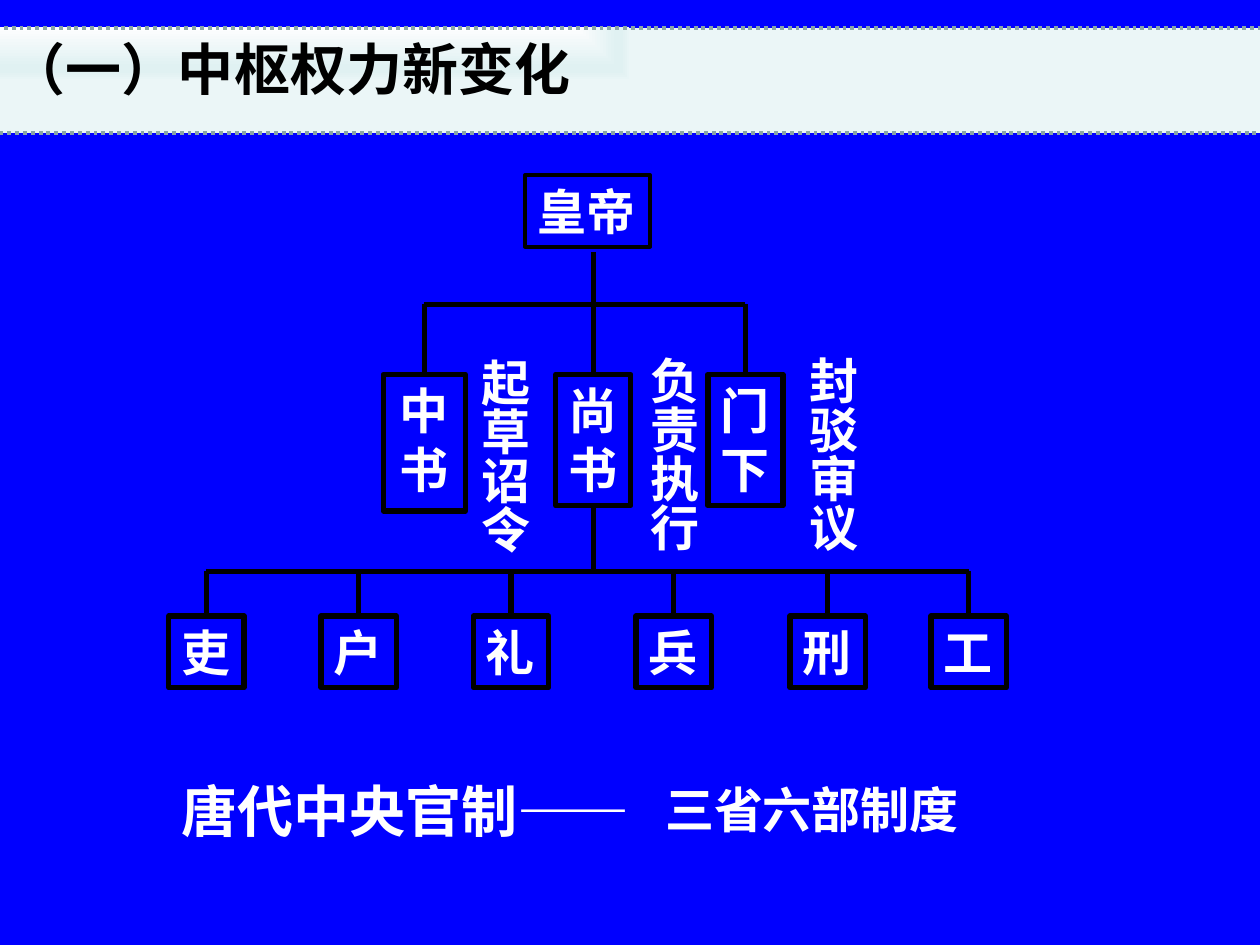
"""Build the slide on the Tang three departments and six ministries."""
from lxml import etree
from pptx import Presentation
from pptx import util as u
from pptx.dml.color import RGBColor
from pptx.enum import dml, shapes, text
from pptx.oxml.ns import qn

BLUE = RGBColor(0x00, 0x00, 0xFF)
BLACK = RGBColor(0x00, 0x00, 0x00)
WHITE = RGBColor(0xFF, 0xFF, 0xFF)
BORDER = RGBColor(0x89, 0xA4, 0xA7)
BANNER_STOPS = (
    (0, RGBColor(0xFC, 0xFD, 0xFE)),
    (74, RGBColor(0xE0, 0xF1, 0xF2)),
    (83, RGBColor(0xE0, 0xF1, 0xF2)),
    (100, RGBColor(0xEB, 0xF6, 0xF7)),
)
TOP, BOTTOM = 0, 2


class ChartSlide:
    font_name = "Noto Sans CJK SC"
    line_width = 3

    def __init__(self, presentation):
        self.slide = presentation.slides.add_slide(presentation.slide_layouts[5])
        self.slide.background.fill.solid()
        self.slide.background.fill.fore_color.rgb = BLUE

    def set_text(self, shape, words, size=28, color=WHITE, wrap=False, align=text.PP_ALIGN.LEFT):
        frame = shape.text_frame
        frame.text = words
        frame.word_wrap = wrap
        frame.auto_size = text.MSO_AUTO_SIZE.SHAPE_TO_FIT_TEXT
        frame.vertical_anchor = text.MSO_ANCHOR.TOP
        for paragraph in frame.paragraphs:
            paragraph.alignment = align
            font = paragraph.font
            font.size, font.bold, font.name = u.Pt(size), True, self.font_name
            font.color.rgb = color
            properties = paragraph._p.pPr.find(qn("a:defRPr"))
            etree.SubElement(properties, qn("a:ea"), typeface=self.font_name)

    def title(self, words, left, top, width, height):
        shape = self.slide.shapes.title
        shape.left, shape.top = u.Pt(left), u.Pt(top)
        shape.width, shape.height = u.Pt(width), u.Pt(height)
        shape.fill.gradient()
        gradient = shape._element.spPr.find(qn("a:gradFill"))
        for child in list(gradient):
            gradient.remove(child)
        stops = etree.SubElement(gradient, qn("a:gsLst"))
        for position, color in BANNER_STOPS:
            stop = etree.SubElement(stops, qn("a:gs"), pos=str(position * 1000))
            etree.SubElement(stop, qn("a:srgbClr"), val=str(color))
        shading = etree.SubElement(gradient, qn("a:path"), {"path": "rect"})
        etree.SubElement(shading, qn("a:fillToRect"), r="100000", b="100000")
        shape.line.color.rgb = BORDER
        shape.line.width = u.Pt(2.25)
        shape.line.dash_style = dml.MSO_LINE.ROUND_DOT
        self.set_text(shape, words, 32, BLACK, wrap=True)

    def box(self, words, left, top, width, height, line_width=line_width, **style):
        shape = self.slide.shapes.add_shape(
            shapes.MSO_SHAPE.RECTANGLE, u.Pt(left), u.Pt(top), u.Pt(width), u.Pt(height))
        shape.shadow.inherit = False
        shape.fill.background()
        shape.line.color.rgb = BLACK
        shape.line.width = u.Pt(line_width)
        self.set_text(shape, words, **style)
        return shape

    def label(self, words, left, top, width, height, vertical=False, **style):
        shape = self.slide.shapes.add_textbox(u.Pt(left), u.Pt(top), u.Pt(width), u.Pt(height))
        self.set_text(shape, words, **style)
        if vertical:
            shape.text_frame._txBody.bodyPr.set("vert", "eaVert")

    def line(self, x1, y1, x2, y2, start=None, end=None):
        connector = self.slide.shapes.add_connector(
            shapes.MSO_CONNECTOR.STRAIGHT, u.Pt(x1), u.Pt(y1), u.Pt(x2), u.Pt(y2))
        connector.line.color.rgb = BLACK
        connector.line.width = u.Pt(self.line_width)
        etree.SubElement(connector._element.spPr, qn("a:effectLst"))
        if start is not None:
            connector.begin_connect(start, BOTTOM)
        if end is not None:
            connector.end_connect(end, TOP)

    def branch(self, bar_y, children):
        centers = [(child.left + child.width / 2) / u.Pt(1) for child in children]
        self.line(centers[0], bar_y, centers[-1], bar_y)
        for center, child in zip(centers, children):
            self.line(center, bar_y, center, child.top / u.Pt(1), end=child)
        return centers


def main():
    presentation = Presentation()
    presentation.slide_width, presentation.slide_height = u.Pt(720), u.Pt(540)
    chart = ChartSlide(presentation)
    chart.title("（一）中枢权力新变化", -1.5, 16, 723.5, 46)

    upper_bar, lower_bar = 174, 326.5
    chart.box("皇帝", 300, 100, 71.5, 41, line_width=2.25)
    departments = [
        chart.box("中\n书", 219, 214, 47, 78, wrap=True, align=text.PP_ALIGN.CENTER),
        chart.box("尚\n书", 317.5, 214, 43, 75),
        chart.box("门\n下", 404.5, 214, 43, 75),
    ]
    ministries = [
        chart.box(name, left, 352, 43, 41)
        for name, left in zip("吏户礼兵刑工", (96.5, 183.5, 270.5, 363.5, 451.5, 532))
    ]
    trunk = chart.branch(upper_bar, departments)[1]
    chart.line(trunk, 144, trunk, upper_bar)
    chart.branch(lower_bar, ministries)
    chart.line(trunk, 289, trunk, lower_bar, start=departments[1])

    for duty, left, top in (("起草诏令", 260.5, 198), ("负责执行", 357, 196.5), ("封驳审议", 448, 196.5)):
        chart.label(duty, left, top, 48, 119, vertical=True)
    chart.label("唐代中央官制——", 96.5, 440, 517, 46, size=32, wrap=True)
    chart.label("三省六部制度", 373, 442, 185, 41)
    presentation.save("out.pptx")


if __name__ == "__main__":
    main()
